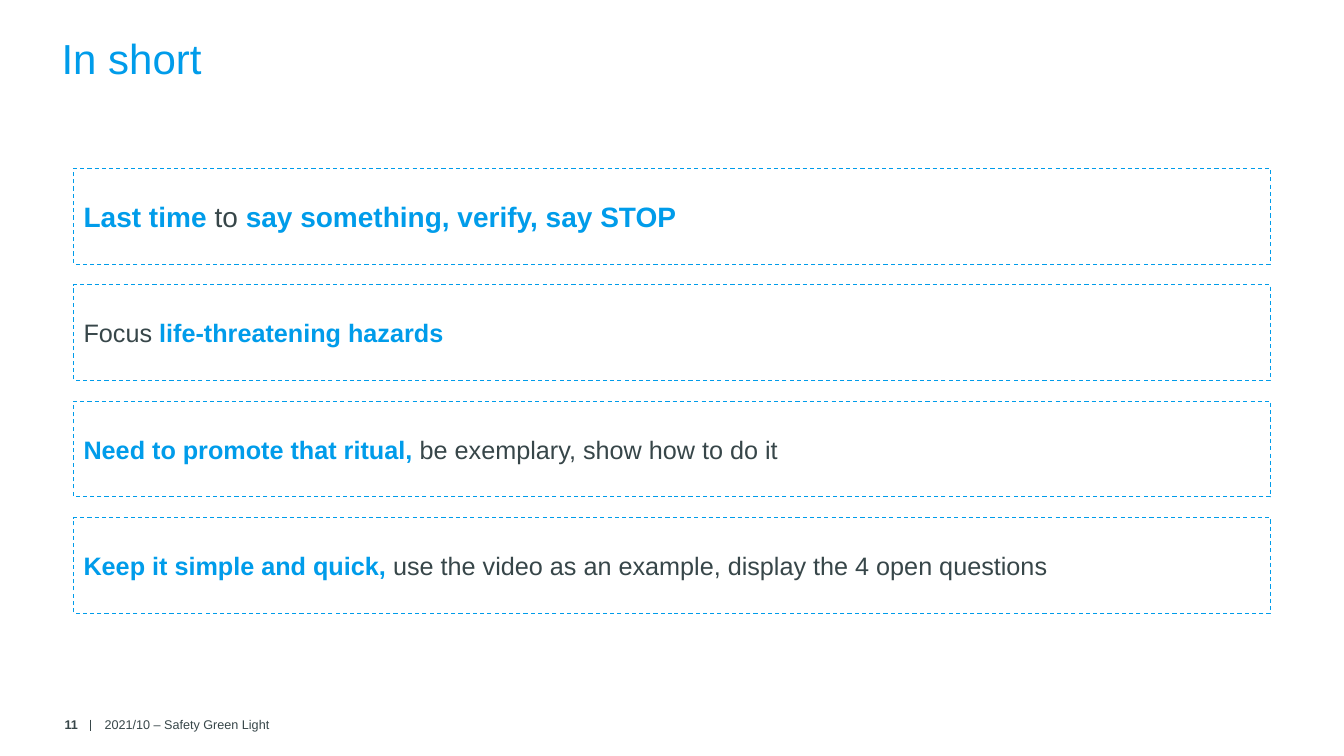
from dataclasses import dataclass

from lxml import etree
from pptx import Presentation
from pptx.dml.color import RGBColor
from pptx.enum.dml import MSO_LINE
from pptx.enum.shapes import MSO_CONNECTOR, MSO_SHAPE
from pptx.enum.text import MSO_ANCHOR, MSO_AUTO_SIZE, PP_ALIGN
from pptx.oxml.ns import qn
from pptx.util import Inches, Pt

COLORS = {"accent": "009CEA", "text": "374649", "background": "FFFFFF"}
FONT = "Arial"
RECTANGLE = MSO_SHAPE.RECTANGLE
STRAIGHT = MSO_CONNECTOR.STRAIGHT
DASH = MSO_LINE.DASH
TOP, MIDDLE = MSO_ANCHOR.TOP, MSO_ANCHOR.MIDDLE
LEFT, RIGHT = PP_ALIGN.LEFT, PP_ALIGN.RIGHT
NO_AUTOFIT = MSO_AUTO_SIZE.NONE
TITLE_ONLY = 5

SLIDE_WIDTH, SLIDE_HEIGHT = Inches(13.33), Inches(7.5)


@dataclass(frozen=True)
class Area:
    """Position and size in percent of the slide."""
    left: float
    top: float
    width: float
    height: float


@dataclass(frozen=True)
class Phrase:
    text: str
    strong: bool = False


@dataclass(frozen=True)
class Message:
    phrases: tuple[Phrase, ...]
    size: int = 18


@dataclass(frozen=True)
class FooterItem:
    text: str
    area: Area
    alignment: PP_ALIGN = LEFT
    bold: bool = False


TITLE_AREA = Area(3.83, 3.6, 79.74, 14.67)
FIRST_MESSAGE = Area(5.48, 22.27, 89.05, 12.67)
MESSAGE_PITCH = 15.4
DIVIDER = Area(6.75, 95.2, 0, 1.47)

MESSAGES = (
    Message((Phrase("Last time ", True), Phrase("to "),
             Phrase("say something, verify, say STOP", True)), 20),
    Message((Phrase("Focus "), Phrase("life-threatening hazards", True))),
    Message((Phrase("Need to promote that ritual, ", True),
             Phrase("be exemplary, show how to do it"))),
    Message((Phrase("Keep it simple and quick, ", True),
             Phrase("use the video as an example, display the 4 open questions"))),
)
FOOTER = (
    FooterItem("11", Area(1.8, 94, 4.73, 3.73), RIGHT, True),
    FooterItem("2021/10 – Safety Green Light", Area(7.05, 94, 29.56, 3.73)),
)


def color(name: str) -> RGBColor:
    return RGBColor.from_string(COLORS[name])


def across(percent: float) -> int:
    return round(SLIDE_WIDTH * percent / 100)


def down(percent: float) -> int:
    return round(SLIDE_HEIGHT * percent / 100)


def bounds(area: Area) -> tuple[int, int, int, int]:
    return across(area.left), down(area.top), across(area.width), down(area.height)


def format_paragraph(paragraph, size: int, color_name: str, alignment: PP_ALIGN = LEFT) -> None:
    paragraph.alignment = alignment
    paragraph.font.name = FONT
    paragraph.font.size = Pt(size)
    paragraph.font.color.rgb = color(color_name)


def set_title(slide, text: str) -> None:
    title = slide.shapes.title
    title.left, title.top, title.width, title.height = bounds(TITLE_AREA)
    frame = title.text_frame
    frame.text = text
    frame.vertical_anchor = TOP
    frame.auto_size = NO_AUTOFIT
    format_paragraph(frame.paragraphs[0], 30, "accent")


def add_message(slide, message: Message, row: int) -> None:
    area = Area(FIRST_MESSAGE.left, FIRST_MESSAGE.top + row * MESSAGE_PITCH,
                FIRST_MESSAGE.width, FIRST_MESSAGE.height)
    shape = slide.shapes.add_shape(RECTANGLE, *bounds(area))
    shape.shadow.inherit = False
    shape.fill.solid()
    shape.fill.fore_color.rgb = color("background")
    shape.line.color.rgb = color("accent")
    shape.line.width = Pt(0.75)
    shape.line.dash_style = DASH
    frame = shape.text_frame
    frame.word_wrap = True
    frame.vertical_anchor = MIDDLE
    paragraph = frame.paragraphs[0]
    format_paragraph(paragraph, message.size, "text")
    for phrase in message.phrases:
        run = paragraph.add_run()
        run.text = phrase.text
        run.font.bold = phrase.strong
        run.font.color.rgb = color("accent" if phrase.strong else "text")


def add_footer_item(slide, item: FooterItem) -> None:
    frame = slide.shapes.add_textbox(*bounds(item.area)).text_frame
    frame.word_wrap = True
    frame.vertical_anchor = MIDDLE
    frame.text = item.text
    paragraph = frame.paragraphs[0]
    format_paragraph(paragraph, 9, "text", item.alignment)
    paragraph.font.bold = item.bold


def add_divider(slide) -> None:
    left, top, width, height = bounds(DIVIDER)
    divider = slide.shapes.add_connector(STRAIGHT, left, top, left + width, top + height)
    divider.line.color.rgb = color("text")
    divider.line.width = Pt(1)
    etree.SubElement(divider._element.spPr, qn("a:effectLst"))


def main() -> None:
    presentation = Presentation()
    presentation.slide_width, presentation.slide_height = SLIDE_WIDTH, SLIDE_HEIGHT
    slide = presentation.slides.add_slide(presentation.slide_layouts[TITLE_ONLY])
    slide.background.fill.solid()
    slide.background.fill.fore_color.rgb = color("background")
    set_title(slide, "In short")
    for row, message in enumerate(MESSAGES):
        add_message(slide, message, row)
    add_divider(slide)
    for item in FOOTER:
        add_footer_item(slide, item)
    presentation.save("out.pptx")


if __name__ == "__main__":
    main()
